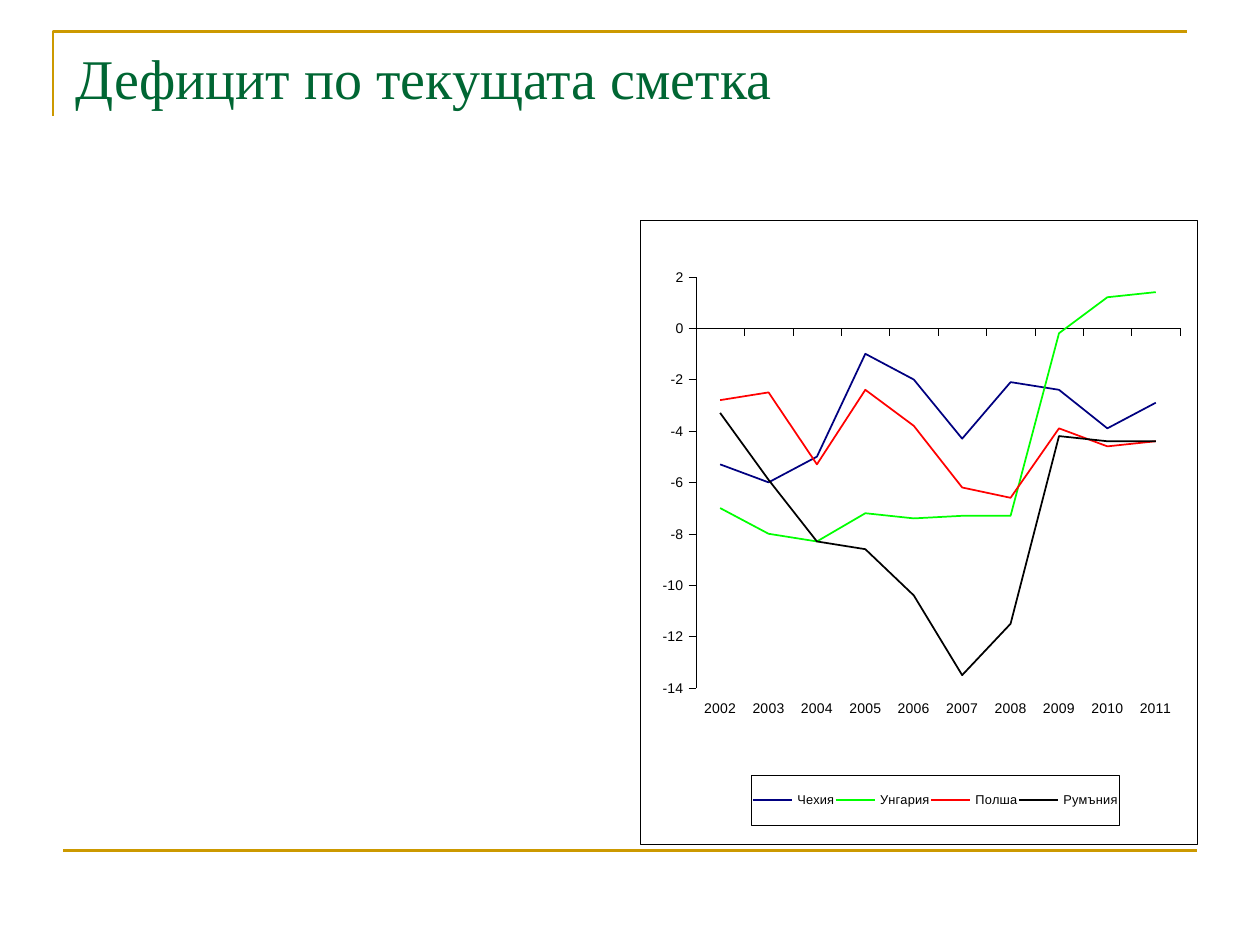
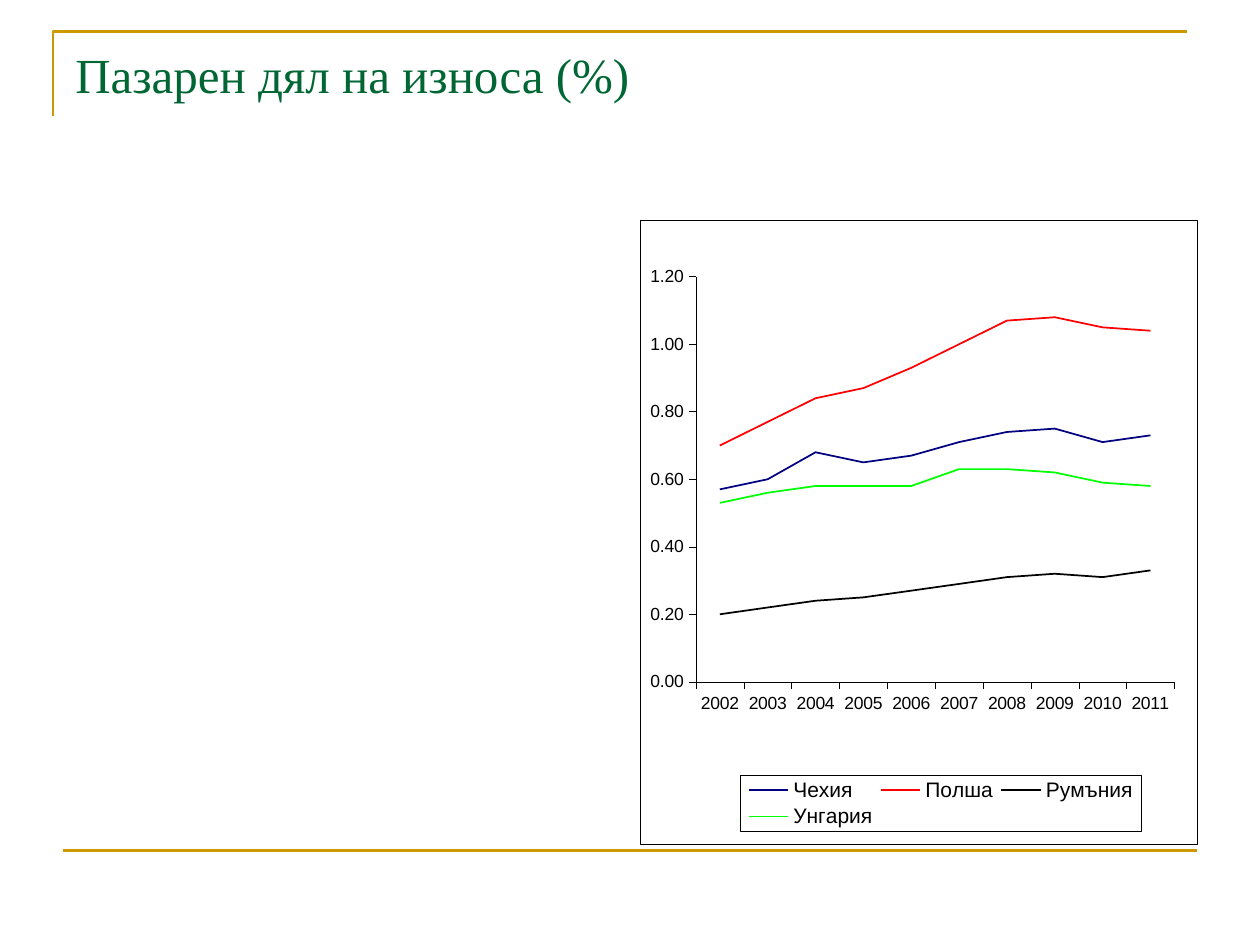
from dataclasses import dataclass

from lxml import etree
from pptx import Presentation
from pptx.chart.data import CategoryChartData
from pptx.dml.color import RGBColor
from pptx.enum.chart import XL_CHART_TYPE, XL_LEGEND_POSITION, XL_TICK_LABEL_POSITION, XL_TICK_MARK
from pptx.enum.shapes import MSO_CONNECTOR
from pptx.enum.text import MSO_ANCHOR
from pptx.oxml import parse_xml
from pptx.oxml.ns import nsdecls, qn
from pptx.util import Inches, Pt

LINE_CHART = XL_CHART_TYPE.LINE
LEGEND_BOTTOM = XL_LEGEND_POSITION.BOTTOM
LABELS_LOW = XL_TICK_LABEL_POSITION.LOW
TICK_OUT, TICK_NONE = XL_TICK_MARK.OUTSIDE, XL_TICK_MARK.NONE
STRAIGHT = MSO_CONNECTOR.STRAIGHT
TOP = MSO_ANCHOR.TOP

GOLD, GREEN, BLACK, WHITE = "CC9900", "006633", "000000", "FFFFFF"
TITLE_FONT, CHART_FONT = "Times New Roman", "Arial"
CHART_BOX = (5.08, 1.75, 4.42, 4.95)
YEARS = [str(year) for year in range(2002, 2012)]
COUNTRY_COLORS = {"Чехия": "000080", "Унгария": "00FF00", "Полша": "FF0000", "Румъния": BLACK}


@dataclass
class ChartStyle:
    """Sizes, scale and inner layout of one line chart."""
    axis_size: float
    legend_size: float
    scale: tuple
    number_format: str
    plot_layout: tuple
    legend_layout: tuple


DEFICIT = {
    "Чехия": [-5.3, -6, -5, -1, -2, -4.3, -2.1, -2.4, -3.9, -2.9],
    "Унгария": [-7, -8, -8.3, -7.2, -7.4, -7.3, -7.3, -0.2, 1.2, 1.4],
    "Полша": [-2.8, -2.5, -5.3, -2.4, -3.8, -6.2, -6.6, -3.9, -4.6, -4.4],
    "Румъния": [-3.3, -5.9, -8.3, -8.6, -10.4, -13.5, -11.5, -4.2, -4.4, -4.4],
}
EXPORT_SHARE = {
    "Чехия": [0.57, 0.6, 0.68, 0.65, 0.67, 0.71, 0.74, 0.75, 0.71, 0.73],
    "Полша": [0.7, 0.77, 0.84, 0.87, 0.93, 1, 1.07, 1.08, 1.05, 1.04],
    "Румъния": [0.2, 0.22, 0.24, 0.25, 0.27, 0.29, 0.31, 0.32, 0.31, 0.33],
    "Унгария": [0.53, 0.56, 0.58, 0.58, 0.58, 0.63, 0.63, 0.62, 0.59, 0.58],
}
DEFICIT_STYLE = ChartStyle(8, 7.3, (-14, 2, 2), "0", (0.1, 0.09, 0.87, 0.66), (0.2, 0.89, 0.66, 0.08))
SHARE_STYLE = ChartStyle(10, 12, (0, 1.2, 0.2), "0.00", (0.1, 0.09, 0.86, 0.65), (0.18, 0.89, 0.72, 0.09))


def color(value):
    """Turn a hex string into a colour."""
    return RGBColor.from_string(value)


def style_line(line, value, width):
    """Give a line its colour and width."""
    line.color.rgb = color(value)
    line.width = Pt(width)


def style_font(font, name, size, value):
    """Give a font its face, size and colour."""
    font.name, font.size = name, Pt(size)
    font.color.rgb = color(value)


def add_frame(page, left, top, width):
    """Draw the gold corner above the title and the rule at the foot."""
    builder = page.shapes.build_freeform(Inches(left), Inches(top + 0.67))
    builder.add_line_segments([(Inches(left), Inches(top)), (Inches(left + width), Inches(top))], close=False)
    corner = builder.convert_to_shape()
    corner.shadow.inherit = False
    corner.fill.background()
    style_line(corner.line, GOLD, 1.5)
    foot_left, foot_top = left + 0.08, top + 6.5
    rule = page.shapes.add_connector(STRAIGHT, Inches(foot_left), Inches(foot_top),
                                     Inches(foot_left + width), Inches(foot_top))
    style_line(rule.line, GOLD, 1.5)
    etree.SubElement(rule._element.spPr, qn("a:effectLst"))


def add_title(page, text, size, left, top, width, height):
    """Write the slide title."""
    box = page.shapes.add_textbox(Inches(left), Inches(top), Inches(width), Inches(height))
    box.text_frame.word_wrap = True
    box.text_frame.vertical_anchor = TOP
    span = box.text_frame.paragraphs[0].add_run()
    span.text = text
    style_font(span.font, TITLE_FONT, size, GREEN)


def bordered_fill():
    """Make a white fill with a thin black border."""
    return parse_xml(
        f'<c:spPr {nsdecls("c", "a")}><a:solidFill><a:srgbClr val="{WHITE}"/></a:solidFill>'
        f'<a:ln w="{Pt(0.25)}"><a:solidFill><a:srgbClr val="{BLACK}"/></a:solidFill></a:ln></c:spPr>')


def manual_layout(fractions, inner=False):
    """Make a chart layout from left, top, width and height fractions."""
    target = '<c:layoutTarget val="inner"/>' if inner else ""
    sizes = "".join(f'<c:{tag} val="{value}"/>' for tag, value in zip("xywh", fractions))
    return parse_xml(
        f'<c:layout {nsdecls("c")}><c:manualLayout>{target}<c:xMode val="edge"/><c:yMode val="edge"/>'
        f'{sizes}</c:manualLayout></c:layout>')


def drop_layout(element):
    """Remove an automatic layout from a chart part."""
    for layout in element.findall(qn("c:layout")):
        element.remove(layout)


def style_axes(chart, style):
    """Set the scale, ticks, labels and lines of both axes."""
    for axis in (chart.category_axis, chart.value_axis):
        axis.has_major_gridlines = False
        axis.major_tick_mark, axis.minor_tick_mark = TICK_OUT, TICK_NONE
        style_font(axis.tick_labels.font, CHART_FONT, style.axis_size, BLACK)
        style_line(axis.format.line, BLACK, 0.25)
    chart.category_axis.tick_label_position = LABELS_LOW
    value_axis = chart.value_axis
    value_axis.minimum_scale, value_axis.maximum_scale, value_axis.major_unit = style.scale
    value_axis.tick_labels.number_format = style.number_format
    value_axis.tick_labels.number_format_is_linked = False


def style_legend(chart, style):
    """Place the bordered legend below the plot."""
    chart.has_legend = True
    legend = chart.legend
    legend.position = LEGEND_BOTTOM
    legend.include_in_layout = False
    style_font(legend.font, CHART_FONT, style.legend_size, BLACK)
    element = legend._element
    drop_layout(element)
    element.find(qn("c:legendPos")).addnext(manual_layout(style.legend_layout))
    element.find(qn("c:overlay")).addnext(bordered_fill())


def add_country_chart(page, values_by_country, style, left, top, width, height):
    """Draw a line chart with one line per country."""
    data = CategoryChartData()
    data.categories = YEARS
    for country, values in values_by_country.items():
        data.add_series(country, values)
    chart = page.shapes.add_chart(LINE_CHART, Inches(left), Inches(top),
                                  Inches(width), Inches(height), data).chart
    chart.has_title = False
    style_font(chart.font, CHART_FONT, 8, BLACK)
    plot = chart.plots[0]
    plot.vary_by_categories = False
    for series in plot.series:
        series.smooth = False
        style_line(series.format.line, COUNTRY_COLORS[series.name], 1)
    style_axes(chart, style)
    style_legend(chart, style)
    chart_element = chart._chartSpace.find(qn("c:chart"))
    chart_element.addnext(bordered_fill())
    plot_area = chart_element.find(qn("c:plotArea"))
    drop_layout(plot_area)
    plot_area.insert(0, manual_layout(style.plot_layout, inner=True))


def add_chart_page(deck, title, title_size, title_height, values_by_country, style):
    """Build one slide with a title and a country chart."""
    page = deck.slides.add_slide(deck.slide_layouts[6])
    add_frame(page, 0.42, 0.25, 9)
    add_title(page, title, title_size, 0.5, 0.3, 9, title_height)
    add_country_chart(page, values_by_country, style, *CHART_BOX)


def main():
    """Build and save the deck."""
    deck = Presentation()
    deck.slide_width, deck.slide_height = Inches(10), Inches(7.5)
    add_chart_page(deck, "Дефицит по текущата сметка", 32, 0.93, DEFICIT, DEFICIT_STYLE)
    add_chart_page(deck, "Пазарен дял на износа (%)", 28, 1.25, EXPORT_SHARE, SHARE_STYLE)
    deck.save("out.pptx")


if __name__ == "__main__":
    main()
